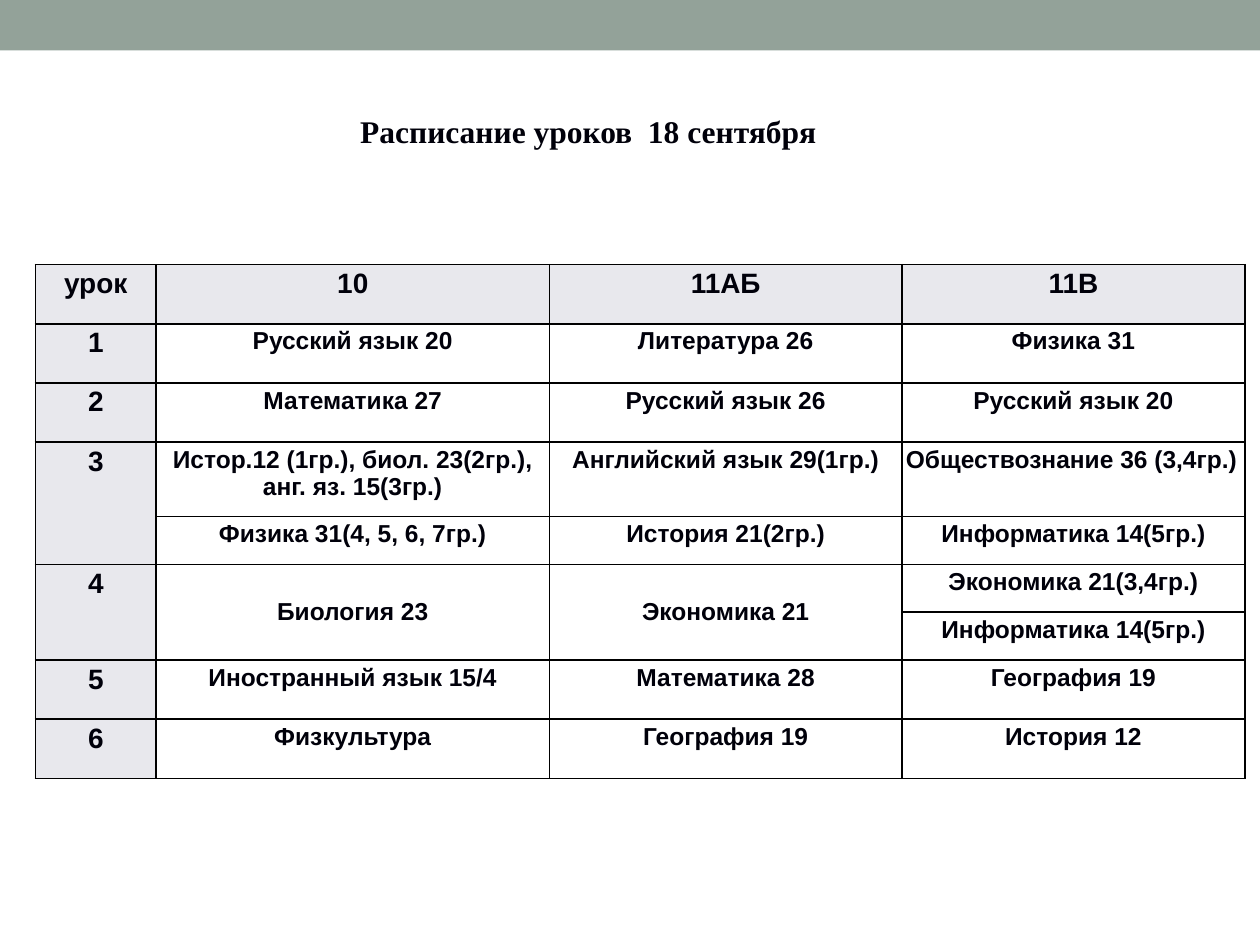
from lxml import etree
from pptx import Presentation
from pptx.dml.color import RGBColor
from pptx.enum.shapes import MSO_SHAPE
from pptx.enum.text import MSO_ANCHOR, PP_ALIGN
from pptx.oxml.ns import qn
from pptx.util import Inches, Pt

RECTANGLE = MSO_SHAPE.RECTANGLE
TOP, MIDDLE = MSO_ANCHOR.TOP, MSO_ANCHOR.MIDDLE
LEFT, CENTER = PP_ALIGN.LEFT, PP_ALIGN.CENTER

INK = RGBColor(0x00, 0x00, 0x0A)
BORDER = RGBColor(0x00, 0x00, 0x00)
HEADER = RGBColor(0xE8, 0xE8, 0xED)
BAND = RGBColor(0x93, 0xA2, 0x99)

COL_WIDTHS = [0.96, 3.12, 2.8, 2.72]
ROW_HEIGHTS = [0.47, 0.47, 0.47, 0.59, 0.38, 0.38, 0.38, 0.47, 0.47]
LESSONS = [
    ["урок", "10", "11АБ", "11В"],
    ["1", "Русский язык 20", "Литература 26", "Физика 31"],
    ["2", "Математика 27", "Русский язык 26", "Русский язык 20"],
    ["3", "Истор.12 (1гр.), биол. 23(2гр.),\nанг. яз. 15(3гр.)",
     "Английский язык 29(1гр.)", "Обществознание 36 (3,4гр.)"],
    ["", "Физика 31(4, 5, 6, 7гр.)", "История 21(2гр.)", "Информатика 14(5гр.)"],
    ["4", "Биология 23", "Экономика 21", "Экономика 21(3,4гр.)"],
    ["", "", "", "Информатика 14(5гр.)"],
    ["5", "Иностранный язык 15/4", "Математика 28", "География 19"],
    ["6", "Физкультура", "География 19", "История 12"],
]
TWO_ROW_CELLS = [(3, 0), (5, 0), (5, 1), (5, 2)]
LEFT_ALIGNED = (3, 3)


def format_text(tf, font, size, align):
    for p in tf.paragraphs:
        p.alignment = align
        for r in p.runs:
            r.font.name = font
            r.font.size = Pt(size)
            r.font.bold = True
            r.font.color.rgb = INK


def add_borders(cell):
    tcPr = cell._tc.get_or_add_tcPr()
    for side in ("a:lnL", "a:lnR", "a:lnT", "a:lnB"):
        ln = etree.SubElement(tcPr, qn(side), w=str(Pt(1)))
        fill = etree.SubElement(ln, qn("a:solidFill"))
        etree.SubElement(fill, qn("a:srgbClr"), val=str(BORDER))


prs = Presentation()
prs.slide_width, prs.slide_height = Inches(10), Inches(7.5)
s = prs.slides.add_slide(prs.slide_layouts[5])

band = s.shapes.add_shape(RECTANGLE, 0, 0, prs.slide_width, Inches(0.4))
band.shadow.inherit = False
band.fill.solid()
band.fill.fore_color.rgb = BAND
band.line.fill.background()

title = s.shapes.title
title.left, title.top = Inches(2.17), Inches(0.84)
title.width, title.height = Inches(5), Inches(0.4)
title.text_frame.text = "Расписание уроков  18 сентября"
title.text_frame.vertical_anchor = TOP
format_text(title.text_frame, "Times New Roman", 18, CENTER)

frame = s.shapes.add_table(
    len(ROW_HEIGHTS), len(COL_WIDTHS), Inches(0.28), Inches(2.1),
    Inches(sum(COL_WIDTHS)), Inches(sum(ROW_HEIGHTS)))
table = frame.table
for column, width in zip(table.columns, COL_WIDTHS):
    column.width = Inches(width)
for row, height in zip(table.rows, ROW_HEIGHTS):
    row.height = Inches(height)
for row, col in TWO_ROW_CELLS:
    table.cell(row, col).merge(table.cell(row + 1, col))

for row, texts in enumerate(LESSONS):
    for col, text in enumerate(texts):
        cell = table.cell(row, col)
        is_header = row == 0 or col == 0
        add_borders(cell)
        if is_header:
            cell.fill.solid()
            cell.fill.fore_color.rgb = HEADER
        else:
            cell.fill.background()
        cell.margin_left = cell.margin_right = Inches(0.03)
        cell.margin_top = cell.margin_bottom = Inches(0.03)
        if cell.is_merge_origin and not is_header:
            cell.vertical_anchor = MIDDLE
        if text:
            cell.text_frame.text = text
            align = LEFT if (row, col) == LEFT_ALIGNED else CENTER
            format_text(cell.text_frame, "Arial", 16 if is_header else 14, align)

prs.save("out.pptx")
